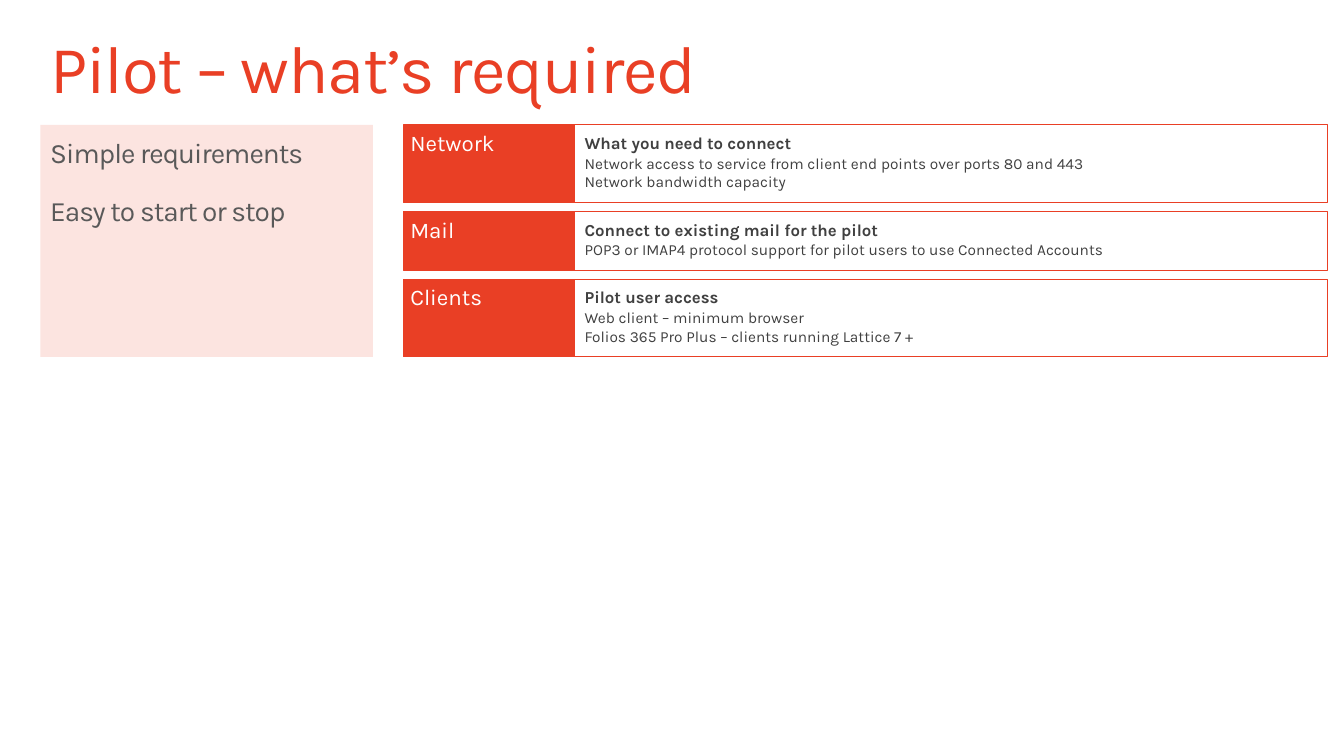
from pptx import Presentation
from pptx import util as u
from pptx.dml.color import RGBColor
from pptx.enum import shapes, text

PX = 9144  # 100 px to the inch
FONT = "Karla"
COLORS = {
    "accent": "E93F25",
    "panel": "FCE4E0",
    "white": "FFFFFF",
    "detail": "404040",
    "summary": "595959",
}

TOP, ROW_GAP = 124, 9
LABEL_LEFT, LABEL_WIDTH = 400, 170
DETAIL_LEFT, DETAIL_WIDTH = 570, 747
REQUIREMENTS = [
    ("Network", 77, [
        "What you need to connect",
        "Network access to service from client end points over ports 80 and 443",
        "Network bandwidth capacity",
    ]),
    ("Mail", 58, [
        "Connect to existing mail for the pilot",
        "POP3 or IMAP4 protocol support for pilot users to use Connected Accounts",
    ]),
    ("Clients", 77, [
        "Pilot user access",
        "Web client – minimum browser",
        "Folios 365 Pro Plus – clients running Lattice 7 +",
    ]),
]


def color(name):
    return RGBColor.from_string(COLORS[name])


def set_frame(frame, margins):
    """Wrap text from the top; margins are left, top, right, bottom in px."""
    frame.word_wrap = True
    frame.vertical_anchor = text.MSO_ANCHOR.TOP
    (frame.margin_left, frame.margin_top,
     frame.margin_right, frame.margin_bottom) = [m * PX for m in margins]


def format_paragraph(paragraph, size, ink, bold=False, line=1.0, after=0, tracking=0):
    """Style a paragraph; tracking is in hundredths of a point."""
    paragraph.alignment = text.PP_ALIGN.LEFT
    paragraph.line_spacing = line
    paragraph.space_after = u.Pt(after)
    for run in paragraph.runs:
        run.font.name = FONT
        run.font.size = u.Pt(size)
        run.font.bold = bold
        run.font.color.rgb = color(ink)
        if tracking:
            run.font._element.set("spc", str(tracking))


def add_box(slide, left, top, width, height, margins, fill=None, line_width=None):
    box = slide.shapes.add_shape(
        shapes.MSO_SHAPE.RECTANGLE, left * PX, top * PX, width * PX, height * PX)
    box.shadow.inherit = False
    if fill:
        box.fill.solid()
        box.fill.fore_color.rgb = color(fill)
    else:
        box.fill.background()
    if line_width:
        box.line.color.rgb = color("accent")
        box.line.width = u.Pt(line_width)
    else:
        box.line.fill.background()
    set_frame(box.text_frame, margins)
    return box.text_frame


def add_title(slide, wording):
    title = slide.shapes.add_textbox(40 * PX, 30 * PX, 1219 * PX, 82 * PX).text_frame
    set_frame(title, (10, 5, 10, 5))
    title.text = wording
    format_paragraph(title.paragraphs[0], 48, "accent", line=0.9, tracking=-100)


def add_summary(slide, height, points):
    summary = add_box(slide, 40, TOP, 330, height, (10, 10, 10, 10), fill="panel")
    summary.text = "\n".join(points)
    for point in summary.paragraphs:
        format_paragraph(point, 20, "summary", after=18, tracking=-70)


def add_requirement(slide, top, height, name, details):
    label = add_box(slide, LABEL_LEFT, top, LABEL_WIDTH, height, (7, 7, 7, 4),
                    fill="accent", line_width=0.85)
    label.text = name
    format_paragraph(label.paragraphs[0], 16, "white", line=0.9)

    detail = add_box(slide, DETAIL_LEFT, top, DETAIL_WIDTH, height,
                     (10, 10, 10, 10), line_width=0.75)
    detail.text = "\n".join(details)
    for index, paragraph in enumerate(detail.paragraphs):
        size = 11 if index else 12
        format_paragraph(paragraph, size, "detail", bold=index == 0,
                         line=0.9, after=0.15 * size)


def main():
    deck = Presentation()
    deck.slide_width, deck.slide_height = u.Inches(13.33), u.Inches(7.5)
    slide = deck.slides.add_slide(deck.slide_layouts[6])

    add_title(slide, "Pilot – what’s required")
    top = TOP
    for name, height, details in REQUIREMENTS:
        add_requirement(slide, top, height, name, details)
        top += height + ROW_GAP
    add_summary(slide, top - ROW_GAP - TOP,
                ["Simple requirements", "Easy to start or stop"])

    deck.save("out.pptx")


if __name__ == "__main__":
    main()
